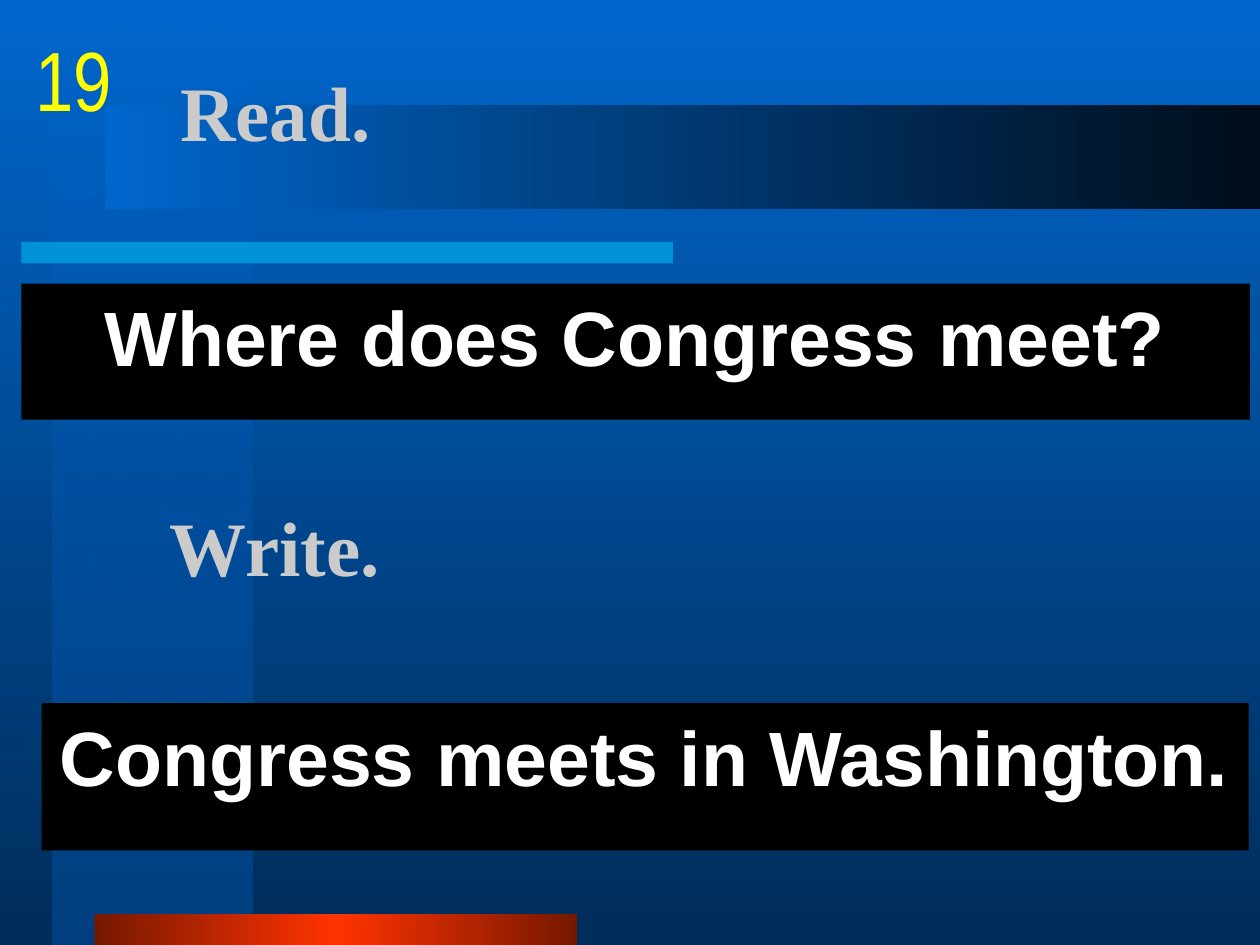
import copy

import pptx
from pptx.dml.color import RGBColor
from pptx.enum.shapes import MSO_SHAPE
from pptx.enum.text import MSO_ANCHOR, PP_ALIGN
from pptx.oxml import parse_xml
from pptx.oxml.ns import nsdecls, qn
from pptx.util import Inches, Pt

THEME = {
    "heading": {"font": "Times New Roman", "size": 44, "color": "CBCBCB", "bold": True},
    "sentence": {"font": "Arial", "size": 44, "color": "FFFFFF", "bold": True},
    "number": {"font": "Arial Narrow", "size": 48, "color": "FFFF00", "bold": False},
    "panel": "000000",
    # Gradient stops: position %, colour, opacity %
    "background": [(0, "0066CC", 100), (100, "002D5A", 100)],
}
DOWN, ACROSS = 270, 0

# Decoration: box (left, top, width, height), gradient stops, direction
BANDS = [
    ((0.42, 0, 1.58, 7.5), [(0, "0066CC", 50), (100, "004080", 100)], DOWN),
    ((0.17, 1.92, 5.17, 0.17), [(0, "00CCFF", 50), (100, "00CCFF", 50)], ACROSS),
    ((0.75, 7.25, 3.83, 0.25),
     [(0, "761800", 100), (50, "FF3300", 100), (100, "761800", 100)], ACROSS),
    ((0.83, 0.83, 9.17, 0.83), [(0, "0066CC", 100), (100, "000D1A", 100)], ACROSS),
]

TITLE = ("Read.", (1.33, 0.25, 8.5, 1.25))
WRITE_HEADING = ("Write.", (1.25, 3.5, 8.5, 1.67))
SENTENCES = [
    ("Where does Congress meet?", (0.17, 2.25, 9.75, 1.08)),
    ("Congress meets in Washington.", (0.33, 5.58, 9.58, 1.17)),
]
NUMBER = ("19", (0.17, 0.17, 0.83, 0.83))


def inches(box):
    return [Inches(value) for value in box]


def apply_gradient(fill, element, stops, angle):
    fill.gradient()
    fill.gradient_angle = angle
    stop_list = next(element.iter(qn("a:gsLst")))
    for old_stop in list(stop_list):
        stop_list.remove(old_stop)
    for position, color, opacity in stops:
        stop_list.append(parse_xml(
            f'<a:gs {nsdecls("a")} pos="{position * 1000}"><a:srgbClr val="{color}">'
            f'<a:alpha val="{opacity * 1000}"/></a:srgbClr></a:gs>'))


def write_text(shape, text, style, align, anchor, wrap=True):
    frame = shape.text_frame
    frame.text = text
    frame.word_wrap = wrap
    frame.vertical_anchor = anchor
    paragraph = frame.paragraphs[0]
    paragraph.alignment = align
    font = paragraph.runs[0].font
    font.name = style["font"]
    font.size = Pt(style["size"])
    font.bold = style["bold"]
    font.color.rgb = RGBColor.from_string(style["color"])
    return paragraph


def add_rectangle(slide, box):
    shape = slide.shapes.add_shape(MSO_SHAPE.RECTANGLE, *inches(box))
    shape.shadow.inherit = False
    shape.line.fill.background()
    return shape


def add_sentence(slide, text, box):
    panel = add_rectangle(slide, box)
    panel.fill.solid()
    panel.fill.fore_color.rgb = RGBColor.from_string(THEME["panel"])
    paragraph = write_text(panel, text, THEME["sentence"], PP_ALIGN.CENTER, MSO_ANCHOR.TOP)
    paragraph.space_before = Pt(4)


def main():
    presentation = pptx.Presentation()
    presentation.slide_width, presentation.slide_height = Inches(10), Inches(7.5)
    slide = presentation.slides.add_slide(presentation.slide_layouts[5])

    # Background and decorative bands
    apply_gradient(slide.background.fill, slide.element, THEME["background"], DOWN)
    for box, stops, angle in BANDS:
        band = add_rectangle(slide, box)
        apply_gradient(band.fill, band.element, stops, angle)

    # Title, brought in front of the bands
    text, box = TITLE
    title = slide.shapes.title
    title.left, title.top, title.width, title.height = inches(box)
    write_text(title, text, THEME["heading"], PP_ALIGN.LEFT, MSO_ANCHOR.MIDDLE)
    slide.shapes.element.append(title.element)

    # Second heading
    text, box = WRITE_HEADING
    heading = slide.shapes.add_textbox(*inches(box))
    write_text(heading, text, THEME["heading"], PP_ALIGN.LEFT, MSO_ANCHOR.MIDDLE)

    # Question and answer panels
    for text, box in SENTENCES:
        add_sentence(slide, text, box)

    # Question number
    text, box = NUMBER
    number = slide.shapes.add_textbox(*inches(box))
    write_text(number, text, THEME["number"], PP_ALIGN.CENTER, MSO_ANCHOR.TOP, wrap=False)

    presentation.save("out.pptx")


if __name__ == "__main__":
    main()
